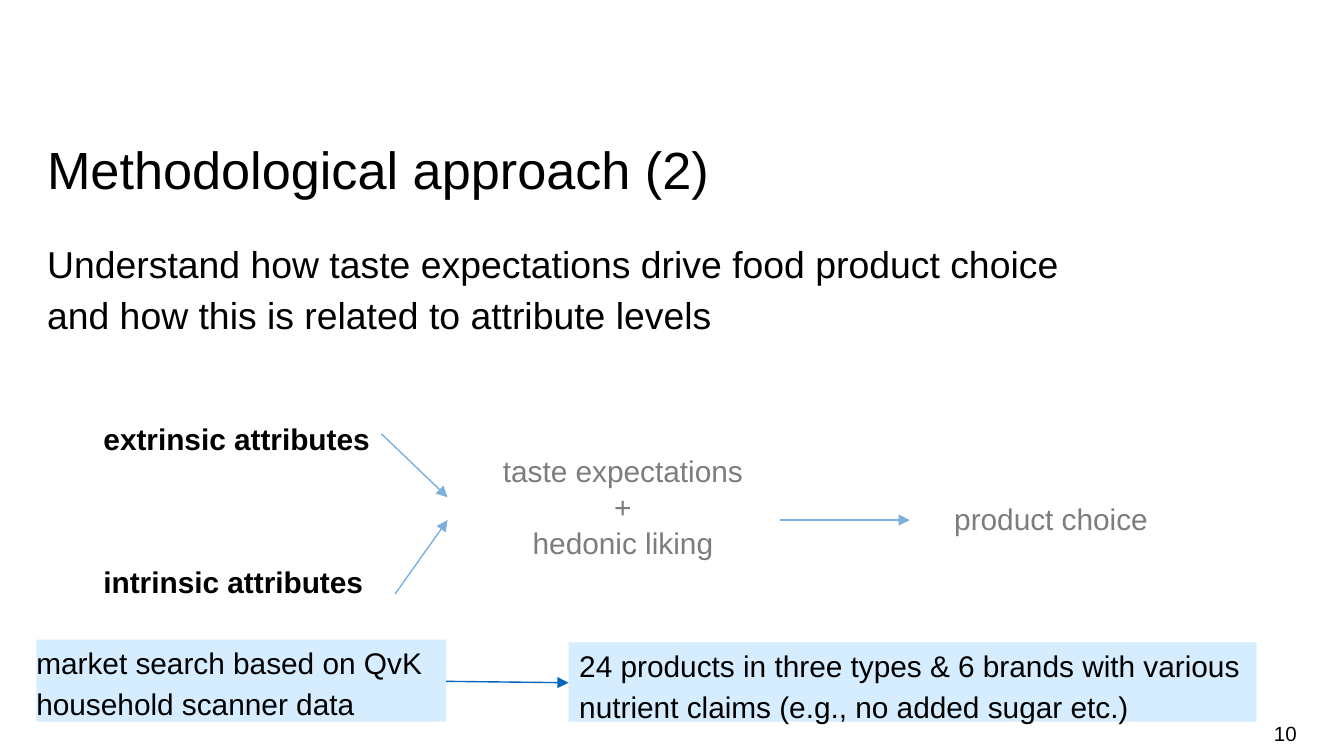
from dataclasses import dataclass

from pptx import Presentation
from pptx.dml.color import RGBColor
from pptx.enum.shapes import MSO_CONNECTOR as Connector, MSO_SHAPE as Preset
from pptx.enum.text import MSO_ANCHOR as Anchor, MSO_AUTO_SIZE as AutoSize, PP_ALIGN as Align
from pptx.oxml.ns import qn
from pptx.slide import Slide
from pptx.text.text import TextFrame
from pptx.util import Inches, Pt
from lxml.etree import SubElement

COLORS = {"text": "000000", "arrow": "0065BD", "panel": "D5EDFF", "veil": "FFFFFF"}
FONT = "Arial"
SPACING = 1.14
PAGE_WIDTH = 10
PAGE_HEIGHT = PAGE_WIDTH * 9 / 16


@dataclass
class Area:
    left: float
    top: float
    width: float
    height: float

    def lengths(self) -> list:
        return [Inches(v) for v in (self.left, self.top, self.width, self.height)]


@dataclass
class Label:
    area: Area
    lines: list[str]
    size: int = 16
    bold: bool = False
    align: Align = Align.LEFT
    anchor: Anchor = Anchor.TOP
    spacing: float = SPACING
    wrap: bool = True
    inset: float = 0
    fill: str = ""


@dataclass
class Arrow:
    start: tuple[float, float]
    end: tuple[float, float]


def write_text(frame: TextFrame, label: Label) -> None:
    frame_format = {
        "word_wrap": label.wrap, "auto_size": AutoSize.NONE,
        "vertical_anchor": label.anchor, "margin_left": Inches(label.inset),
        "margin_right": 0, "margin_top": 0, "margin_bottom": 0,
    }
    for name, value in frame_format.items():
        setattr(frame, name, value)
    para_format = {"alignment": label.align, "line_spacing": label.spacing,
                   "space_before": Pt(0), "space_after": Pt(0)}
    font_format = {"name": FONT, "size": Pt(label.size), "bold": label.bold}
    for index, line in enumerate(label.lines):
        para = frame.add_paragraph() if index else frame.paragraphs[0]
        for name, value in para_format.items():
            setattr(para, name, value)
        span = para.add_run()
        span.text = line
        for name, value in font_format.items():
            setattr(span.font, name, value)
        span.font.color.rgb = RGBColor.from_string(COLORS["text"])


def fill_placeholder(box, label: Label) -> None:
    box.left, box.top, box.width, box.height = label.area.lengths()
    # Plain paragraph without bullet or hanging indent
    properties = box.text_frame.paragraphs[0]._p.get_or_add_pPr()
    properties.set("marL", "0")
    properties.set("indent", "0")
    SubElement(properties, qn("a:buNone"))
    write_text(box.text_frame, label)


def draw_rectangle(page: Slide, area: Area, color: str):
    box = page.shapes.add_shape(Preset.RECTANGLE, *area.lengths())
    box.shadow.inherit = False
    box.fill.solid()
    box.fill.fore_color.rgb = RGBColor.from_string(COLORS[color])
    box.line.fill.background()
    return box


def draw_label(page: Slide, label: Label) -> None:
    if label.fill:
        box = draw_rectangle(page, label.area, label.fill)
    else:
        box = page.shapes.add_textbox(*label.area.lengths())
    write_text(box.text_frame, label)


def draw_arrow(page: Slide, arrow: Arrow) -> None:
    ends = [Inches(v) for v in (*arrow.start, *arrow.end)]
    line = page.shapes.add_connector(Connector.STRAIGHT, *ends)
    line.line.color.rgb = RGBColor.from_string(COLORS["arrow"])
    line.line.width = Pt(0.75)
    SubElement(line.line._get_or_add_ln(), qn("a:tailEnd"), type="triangle")
    SubElement(line._element.spPr, qn("a:effectLst"))


def draw_veil(page: Slide, area: Area, opacity: int) -> None:
    veil = draw_rectangle(page, area, "veil")
    color = veil._element.spPr.find(qn("a:solidFill")).find(qn("a:srgbClr"))
    SubElement(color, qn("a:alpha"), val=str(opacity * 1000))


TITLE = Label(Area(0.35, 1.04, 9.29, 0.45), ["Methodological approach (2)"],
              size=28, spacing=Pt(32))
BODY = Label(Area(0.35, 1.75, 7.96, 3.23),
             ["Understand how taste expectations drive food product choice "
              "and how this is related to attribute levels"], size=20)
LABELS = [
    Label(Area(7.41, 5.31, 2.24, 0.3), ["10"], size=11, align=Align.RIGHT,
          anchor=Anchor.MIDDLE, spacing=1.0),
    Label(Area(0.77, 3.09, 2.07, 0.31), ["extrinsic attributes"], bold=True),
    Label(Area(0.77, 4.16, 2.07, 0.31), ["intrinsic attributes"], bold=True),
    Label(Area(3.73, 3.37, 1.81, 0.81), ["taste expectations", "+", "hedonic liking"],
          align=Align.CENTER, spacing=1.0, wrap=False),
    Label(Area(7.1, 3.69, 1.46, 0.28), ["product choice"], wrap=False),
    Label(Area(0.27, 4.76, 3.05, 0.61),
          ["market search based on QvK", "household scanner data"], fill="panel"),
    Label(Area(4.23, 4.78, 5.12, 0.59),
          ["24 products in three types & 6 brands with various "
           "nutrient claims (e.g., no added sugar etc.)"], inset=0.08, fill="panel"),
]
ARROWS = [
    Arrow((2.84, 3.23), (3.33, 3.7)),
    Arrow((2.94, 4.42), (3.33, 3.87)),
    Arrow((5.8, 3.87), (6.77, 3.87)),
    Arrow((3.32, 5.07), (4.23, 5.08)),
]


def main() -> None:
    deck = Presentation()
    deck.slide_width, deck.slide_height = Inches(PAGE_WIDTH), Inches(PAGE_HEIGHT)
    page = deck.slides.add_slide(deck.slide_layouts[1])

    # Title and statement
    fill_placeholder(page.shapes.title, TITLE)
    fill_placeholder(page.placeholders[1], BODY)

    # Flow of attributes, expectations and choice
    for label in LABELS:
        draw_label(page, label)
    for arrow in ARROWS:
        draw_arrow(page, arrow)

    # Fade the later steps of the flow
    draw_veil(page, Area(2.84, 2.88, 6.42, 1.54), 49)
    deck.save("out.pptx")


if __name__ == "__main__":
    main()
